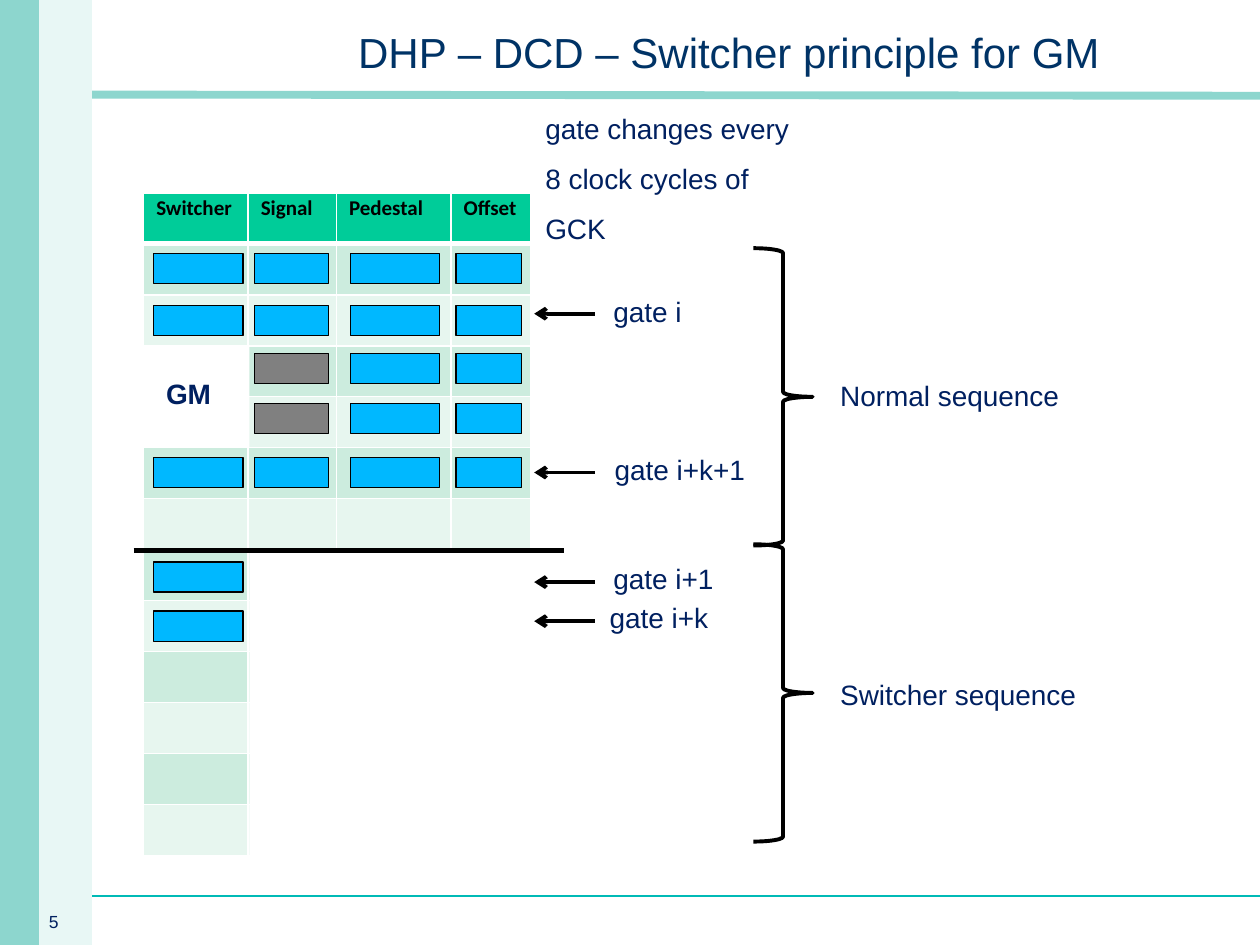
from lxml import etree
from pptx import Presentation, util as u
from pptx.dml.color import RGBColor
from pptx.enum import shapes, text
from pptx.oxml import ns

NAVY = RGBColor(0x00, 0x20, 0x60)
TITLE = RGBColor(0x00, 0x33, 0x66)
AQUA = RGBColor(0x8D, 0xD6, 0xCE)
PALE = RGBColor(0xE8, 0xF7, 0xF5)
TEAL = RGBColor(0x00, 0xBA, 0xB6)
GREEN = RGBColor(0x00, 0xCC, 0x99)
BANDS = [RGBColor(0xE7, 0xF6, 0xEF), RGBColor(0xCC, 0xEC, 0xDE)]
BLUE = RGBColor(0x00, 0xB8, 0xFF)
GREY = RGBColor(0x80, 0x80, 0x80)
BLACK = RGBColor(0, 0, 0)
WHITE = RGBColor(255, 255, 255)
RECT = shapes.MSO_SHAPE.RECTANGLE
BRACE = shapes.MSO_SHAPE.RIGHT_BRACE
LEFT, MID = text.PP_ALIGN.LEFT, text.PP_ALIGN.CENTER

deck = Presentation()
deck.slide_width, deck.slide_height = u.Inches(10), u.Inches(7.5)
slide = deck.slides.add_slide(deck.slide_layouts[6])
# The slide is a grid of 100 columns by 75 rows
unit = deck.slide_width / 100


def draw(kind, x, y, w, h, fill=None, edge=0):
    form = slide.shapes.add_shape(kind, *[int(v * unit) for v in (x, y, w, h)])
    form.shadow.inherit = False
    if fill is None:
        form.fill.background()
    else:
        form.fill.solid()
        form.fill.fore_color.rgb = fill
    if edge:
        form.line.color.rgb = BLACK
        form.line.width = u.Pt(edge)
    else:
        form.line.fill.background()


def rule(x1, y1, x2, y2, color, width, arrow=False):
    ends = [int(v * unit) for v in (x1, y1, x2, y2)]
    link = slide.shapes.add_connector(shapes.MSO_CONNECTOR.STRAIGHT, *ends)
    link.line.color.rgb = color
    link.line.width = u.Pt(width)
    if arrow:
        tip = etree.SubElement(link.line._get_or_add_ln(), ns.qn("a:tailEnd"))
        tip.set("type", "arrow")
    etree.SubElement(link._element.spPr, ns.qn("a:effectLst"))


# Frame of the slide
rule(0, 7.5, 100, 7.6, AQUA, 4.5)
rule(7.3, 71.1, 100, 71.1, TEAL, 1.5)
draw(RECT, 3, 0, 4.3, 75, PALE)
draw(RECT, 0, 0, 3.1, 75, AQUA)

# Memory table
heads = ["Switcher", "Signal", "Pedestal", "Offset"]
wide = [8.3, 7, 9.1, 6.3]
count, step = 13, 4.05
area = [int(v * unit) for v in (11.4, 15.3, sum(wide), count * step)]
grid = slide.shapes.add_table(count, len(heads), *area).table
for col, w in zip(grid.columns, wide):
    col.width = int(w * unit)
for r, row in enumerate(grid.rows):
    row.height = int(step * unit)
    for c, cell in enumerate(row.cells):
        if r == 0:
            cell.text = heads[c]
        para = cell.text_frame.paragraphs[0]
        para.line_spacing = 0.8
        para.font.name, para.font.size = "Calibri", u.Pt(12)
        para.font.bold, para.font.color.rgb = True, BLACK
        props = cell._tc.get_or_add_tcPr()
        for side in "LRTB":
            thick = (side == "B" and r == 0) or (side == "T" and r == 1)
            edge = etree.SubElement(props, ns.qn("a:ln" + side))
            edge.set("w", str(u.Pt(3 if thick else 1)))
            paint = etree.SubElement(edge, ns.qn("a:solidFill"))
            etree.SubElement(paint, ns.qn("a:srgbClr")).set("val", str(WHITE))
        cell.fill.solid()
        cell.fill.fore_color.rgb = BANDS[r % 2] if r else GREEN

# White covers over unused cells, and the divider
draw(RECT, 19.8, 43.7, 24.7, 26.5, WHITE)
draw(RECT, 11.1, 27.5, 8.7, 8, WHITE)
rule(10.6, 43.7, 44.8, 43.7, BLACK, 3)

# Data blocks: left and width of each column, then top and fills of each row
slots = [(12.2, 7.1), (20.2, 5.9), (27.8, 7.1), (36.2, 5.2)]
full = [BLUE] * 4
moved = [None, GREY, BLUE, BLUE]
alone = [BLUE, None, None, None]
for top, fills in [(20.1, full), (24.25, full), (28.05, moved), (32, moved),
                   (36.3, full), (44.6, alone), (48.5, alone)]:
    for (x, w), fill in zip(slots, fills):
        if fill is not None:
            draw(RECT, x, top, w, 2.4, fill, 0.75)

# Gate arrows and sequence braces
for y in (24.9, 37.5, 46.2, 49.3):
    rule(47.2, y, 42.4, y, BLACK, 2.25, arrow=True)
for y in (19.7, 43.2):
    draw(BRACE, 59.8, y, 4.7, 23.6, edge=2.25)

# Texts: wording, place, size, colour, bold, spacing, alignment, wrap
for words, spot, size, color, bold, gap, side, wrap in [
    ("DHP – DCD – Switcher principle for GM", (17.7, 1.3, 80.3, 5.2),
     24, TITLE, False, 1.1, MID, True),
    ("gate changes every 8 clock cycles of GCK", (42.3, 7, 22, 13.1),
     16, NAVY, False, 1.5, LEFT, True),
    ("gate i", (47.7, 23.4, 7.5, 3.2), 16, NAVY, False, 0.8, LEFT, False),
    ("gate i+k+1", (47.8, 35.9, 12.5, 3.2), 16, NAVY, False, 0.8, LEFT, False),
    ("gate i+1", (47.7, 44.6, 10.1, 3.2), 16, NAVY, False, 0.8, LEFT, False),
    ("gate i+k", (47.4, 47.7, 9.9, 3.2), 16, NAVY, False, 0.8, LEFT, False),
    ("Normal sequence", (65.7, 30.1, 19.6, 3.2),
     16, NAVY, False, 0.8, LEFT, False),
    ("Switcher sequence", (65.7, 53.8, 21, 3.2),
     16, NAVY, False, 0.8, LEFT, False),
    ("GM", (12.2, 29.9, 5.6, 3.2), 16, NAVY, True, 0.8, LEFT, False),
    ("5", (2.9, 72.1, 4.8, 2.4), 10, NAVY, False, 0.8, LEFT, True),
]:
    box = slide.shapes.add_textbox(*[int(v * unit) for v in spot])
    frame = box.text_frame
    frame.word_wrap = wrap
    if side == MID:
        frame.vertical_anchor = text.MSO_ANCHOR.MIDDLE
    para = frame.paragraphs[0]
    para.text, para.alignment, para.line_spacing = words, side, gap
    para.font.name, para.font.size = "Arial", u.Pt(size)
    para.font.bold, para.font.color.rgb = bold, color

deck.save("out.pptx")
